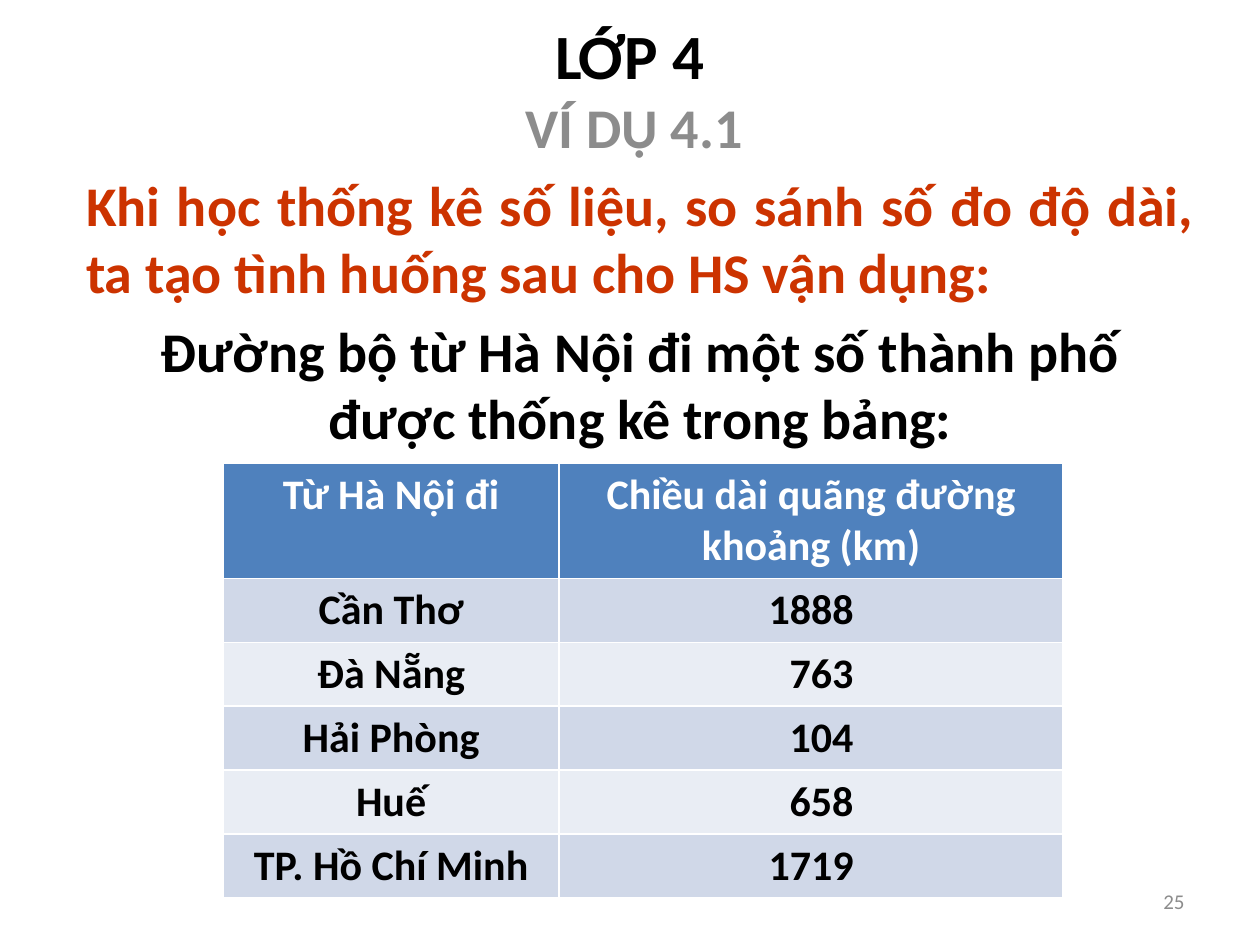
from pptx import Presentation
from pptx.dml.color import RGBColor
from pptx.enum.text import MSO_ANCHOR, MSO_AUTO_SIZE, PP_ALIGN
from pptx.util import Pt

LEFT, MID, RIGHT = PP_ALIGN.LEFT, PP_ALIGN.CENTER, PP_ALIGN.RIGHT
FULL = PP_ALIGN.JUSTIFY
TOP, CENTRE = MSO_ANCHOR.TOP, MSO_ANCHOR.MIDDLE
FIXED = MSO_AUTO_SIZE.NONE

BLACK, WHITE, GREY, RED = "000000", "FFFFFF", "8C8C8C", "CC3300"
BLUE, BANDS = "4F81BD", ("D0D8E8", "E9EDF4")

HEAD = ("Từ Hà Nội đi", "Chiều dài quãng đường khoảng (km)")
ROADS = [
    ("Cần Thơ", "1888"),
    ("Đà Nẵng", "763"),
    ("Hải Phòng", "104"),
    ("Huế", "658"),
    ("TP. Hồ Chí Minh", "1719"),
]


def color(code):
    return RGBColor.from_string(code)


def write(para, text, size=32, tint=BLACK, bold=True, align=MID, before=0):
    para.text = text
    para.alignment = align
    para.space_before = Pt(before)
    for run in para.runs:
        font = run.font
        font.name, font.size, font.bold = Page.font, Pt(size), bold
        font.color.rgb = color(tint)


class Page:
    font = "Calibri"

    def __init__(self, deck):
        self.slide = deck.slides.add_slide(deck.slide_layouts[0])

    def fill(self, shape, box, lines, anchor):
        """Place a text shape and write one paragraph per (text, format) pair."""
        shape.left, shape.top, shape.width, shape.height = map(Pt, box)
        frame = shape.text_frame
        frame.word_wrap = True
        frame.auto_size = FIXED
        frame.vertical_anchor = anchor
        for i, (text, style) in enumerate(lines):
            para = frame.add_paragraph() if i else frame.paragraphs[0]
            write(para, text, **style)

    def title(self, box, text, **style):
        self.fill(self.slide.shapes.title, box, [(text, style)], CENTRE)

    def body(self, box, lines):
        self.fill(self.slide.placeholders[1], box, lines, TOP)

    def label(self, box, text, **style):
        shape = self.slide.shapes.add_textbox(*map(Pt, box))
        self.fill(shape, box, [(text, style)], CENTRE)

    def table(self, box, rows, widths, heights):
        shape = self.slide.shapes.add_table(len(rows), len(widths), *map(Pt, box))
        grid = shape.table
        for col, width in zip(grid.columns, widths):
            col.width = Pt(width)
        for r, row in enumerate(rows):
            grid.rows[r].height = Pt(heights[r])
            for c, text in enumerate(row):
                cell = grid.cell(r, c)
                cell.fill.solid()
                cell.fill.fore_color.rgb = color(BANDS[(r - 1) % 2] if r else BLUE)
                if text.isdigit():
                    # Shift short numbers so that the units line up
                    cell.margin_left = Pt(7.2 + 12 * (4 - len(text)))
                write(cell.text_frame.paragraphs[0], text, size=24,
                      tint=BLACK if r else WHITE, before=6)


def main():
    deck = Presentation()
    deck.slide_width, deck.slide_height = Pt(720), Pt(540)
    page = Page(deck)
    page.title((54, -2, 612, 66), "LỚP 4", size=36)
    page.body((42, 49, 648, 464), [
        ("VÍ DỤ 4.1 ", dict(tint=GREY, before=6.4)),
        ("Khi học thống kê số liệu, so sánh số đo độ dài, "
         "ta tạo tình huống sau cho HS vận dụng:",
         dict(tint=RED, align=FULL, before=6.4)),
        ("Đường bộ từ Hà Nội đi một số thành phố\vđược thống kê trong bảng:",
         dict(before=6.4)),
    ])
    page.table((127.5, 264.5, 480, 248.5), [HEAD] + ROADS, (192, 288),
               [66] + [36.5] * len(ROADS))
    page.label((516, 500.5, 168, 28.75), "25", size=12, tint=GREY,
               bold=False, align=RIGHT)
    deck.save("out.pptx")


if __name__ == "__main__":
    main()
